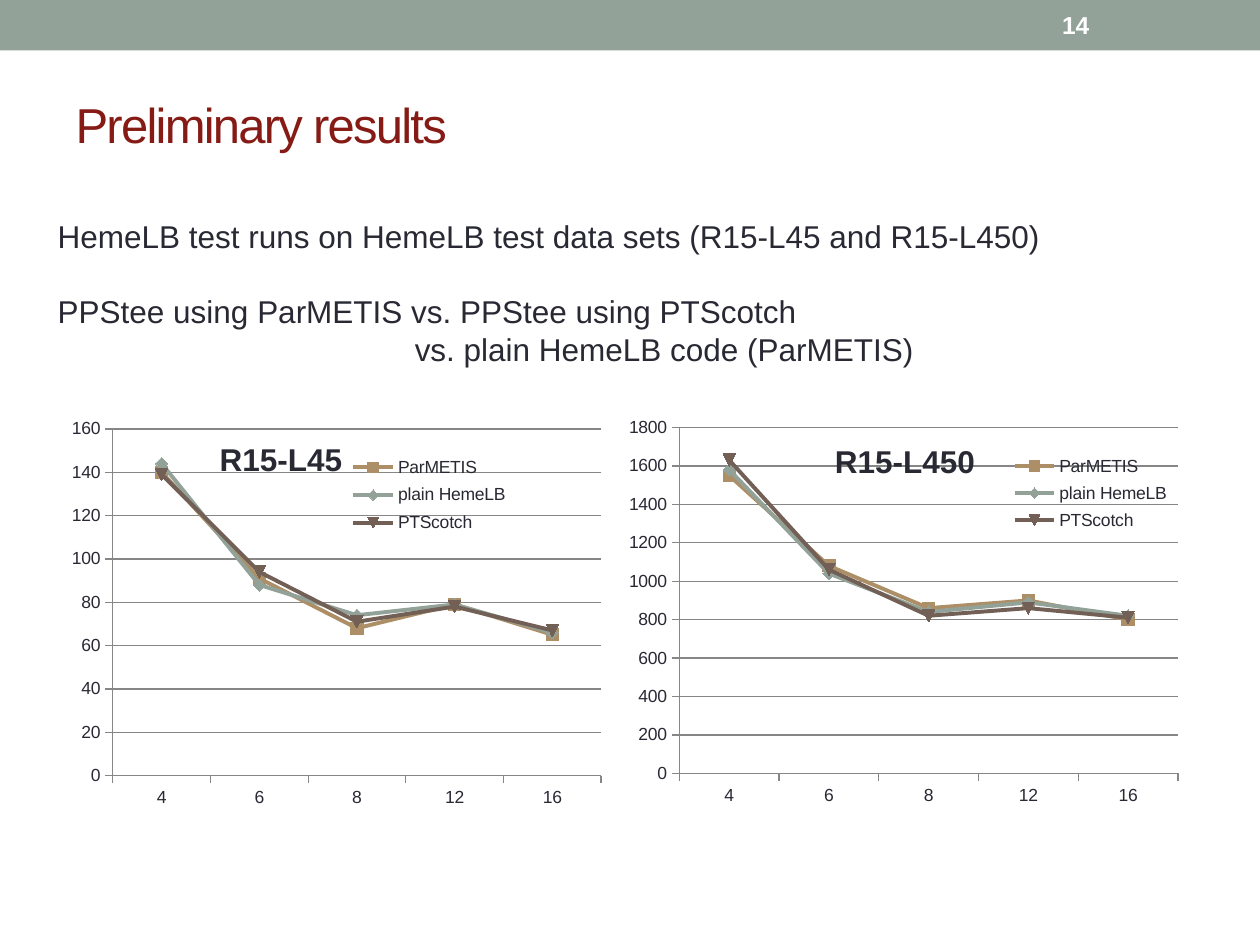
from lxml.etree import SubElement
from pptx import Presentation
from pptx.chart.data import CategoryChartData
from pptx.dml.color import RGBColor
from pptx.enum.chart import XL_CHART_TYPE, XL_LEGEND_POSITION, XL_TICK_MARK
from pptx.enum.shapes import MSO_SHAPE
from pptx.enum.text import MSO_ANCHOR, PP_ALIGN
from pptx.oxml.ns import qn
from pptx.util import Pt

INK = {"bar": "93A299", "title": "861B15", "text": "292934",
       "white": "FFFFFF", "grid": "868686"}
TITLE = "Preliminary results"
PAGE = "14"
LINES = [
    ("HemeLB test runs on HemeLB test data sets (R15-L45 and R15-L450)", 0, 0),
    ("PPStee using ParMETIS vs. PPStee using PTScotch", 21.7, 0),
    ("vs. plain HemeLB code (ParMETIS)", 0, 204),
]
CATS = ["4", "6", "8", "12", "16"]
NAMES = {"ParMETIS": "AD8F67", "plain HemeLB": "93A299", "PTScotch": "726056"}
CHARTS = [
    {"name": "R15-L45", "box": (36, 233.3, 319.7, 236.2), "top": 160, "step": 20,
     "plot": (0.089, 0.05, 0.873, 0.839), "head": (0.27, 0.06),
     "key": (0.51, 0.1, 0.29, 0.22),
     "rows": [(140, 91, 68, 79, 65), (144, 88, 74, 79, 66), (139, 94, 71, 78, 67)]},
    {"name": "R15-L450", "box": (355.7, 233.3, 328.3, 234), "top": 1800, "step": 200,
     "plot": (0.099, 0.047, 0.868, 0.845), "head": (0.36, 0.065),
     "key": (0.675, 0.1, 0.28, 0.215),
     "rows": [(1550, 1080, 860, 900, 800), (1580, 1040, 840, 890, 820),
              (1630, 1060, 820, 860, 810)]},
]


def style(font, size, ink, bold=False):
    font.name = "Arial"
    font.size = Pt(size)
    font.bold = bold
    font.color.rgb = RGBColor.from_string(INK[ink])


def place(node, spot, index, inner=False):
    old = node.find(qn("c:layout"))
    if old is not None:
        node.remove(old)
    lay = SubElement(node, qn("c:layout"))
    node.insert(index, lay)
    man = SubElement(lay, qn("c:manualLayout"))
    if inner:
        SubElement(man, qn("c:layoutTarget")).set("val", "inner")
    for tag in ("xMode", "yMode"):
        SubElement(man, qn("c:" + tag)).set("val", "edge")
    for tag, val in zip("xywh", spot):
        SubElement(man, qn("c:" + tag)).set("val", str(val))


def add_text(slide, box):
    frame = slide.shapes.add_textbox(*map(Pt, box)).text_frame
    frame.word_wrap = True
    return frame


def add_plot(slide, item):
    data = CategoryChartData()
    data.categories = CATS
    for name, row in zip(NAMES, item["rows"]):
        data.add_series(name, row)
    chart = slide.shapes.add_chart(
        XL_CHART_TYPE.LINE_MARKERS, *map(Pt, item["box"]), data).chart
    style(chart.font, 10, "text")

    chart.has_title = True
    head = chart.chart_title.text_frame
    head.text = item["name"]
    style(head.paragraphs[0].runs[0].font, 18, "text", True)
    chart.has_legend = True
    chart.legend.position = XL_LEGEND_POSITION.RIGHT
    chart.legend.include_in_layout = False
    style(chart.legend.font, 10, "text")

    root = chart.element.find(qn("c:chart"))
    title = root.find(qn("c:title"))
    place(title, item["head"], 1)
    over = title.find(qn("c:overlay"))
    if over is None:
        over = SubElement(title, qn("c:overlay"))
        title.insert(2, over)
    over.set("val", "1")
    place(root.find(qn("c:legend")), item["key"], 1)
    place(root.find(qn("c:plotArea")), item["plot"], 0, True)

    grid = RGBColor.from_string(INK["grid"])
    side = chart.value_axis
    side.minimum_scale, side.maximum_scale = 0, item["top"]
    side.major_unit = item["step"]
    side.has_major_gridlines = True
    lines = [side.major_gridlines.format.line]
    for axis in (side, chart.category_axis):
        axis.major_tick_mark = XL_TICK_MARK.OUTSIDE
        style(axis.tick_labels.font, 10, "text")
        lines.append(axis.format.line)
    for line in lines:
        line.color.rgb = grid
        line.width = Pt(0.75)

    plot = chart.plots[0]
    plot.vary_by_categories = False
    for series, ink in zip(plot.series, NAMES.values()):
        tone = RGBColor.from_string(ink)
        series.smooth = False
        series.format.line.color.rgb = tone
        series.format.line.width = Pt(2.25)
        mark = series.marker
        mark.size = 7
        mark.format.fill.solid()
        mark.format.fill.fore_color.rgb = tone
        mark.format.line.color.rgb = tone


def main():
    deck = Presentation()
    deck.slide_width, deck.slide_height = Pt(720), Pt(540)
    slide = deck.slides.add_slide(deck.slide_layouts[5])

    bar = slide.shapes.add_shape(MSO_SHAPE.RECTANGLE, 0, 0, Pt(720), Pt(28.8))
    bar.shadow.inherit = False
    bar.fill.solid()
    bar.fill.fore_color.rgb = RGBColor.from_string(INK["bar"])
    bar.line.fill.background()

    title = slide.shapes.title
    title.left, title.top, title.width, title.height = map(Pt, (36, 41.8, 648, 58.3))
    frame = title.text_frame
    frame.text = TITLE
    frame.vertical_anchor = MSO_ANCHOR.MIDDLE
    frame.paragraphs[0].alignment = PP_ALIGN.LEFT
    font = frame.paragraphs[0].runs[0].font
    style(font, 28, "title")
    font._element.set("spc", "-100")

    frame = add_text(slide, (599.8, 1.4, 84.2, 25.9))
    frame.text = PAGE
    frame.vertical_anchor = MSO_ANCHOR.MIDDLE
    style(frame.paragraphs[0].runs[0].font, 14, "white", True)

    frame = add_text(slide, (25.9, 120.2, 600, 94.3))
    frame.text = "\n".join(text for text, gap, dent in LINES)
    for para, (text, gap, dent) in zip(frame.paragraphs, LINES):
        if gap:
            para.space_before = Pt(gap)
        if dent:
            para._p.get_or_add_pPr().set("marL", str(Pt(dent)))
        style(para.runs[0].font, 18, "text")

    for item in CHARTS:
        add_plot(slide, item)
    deck.save("out.pptx")


if __name__ == "__main__":
    main()
